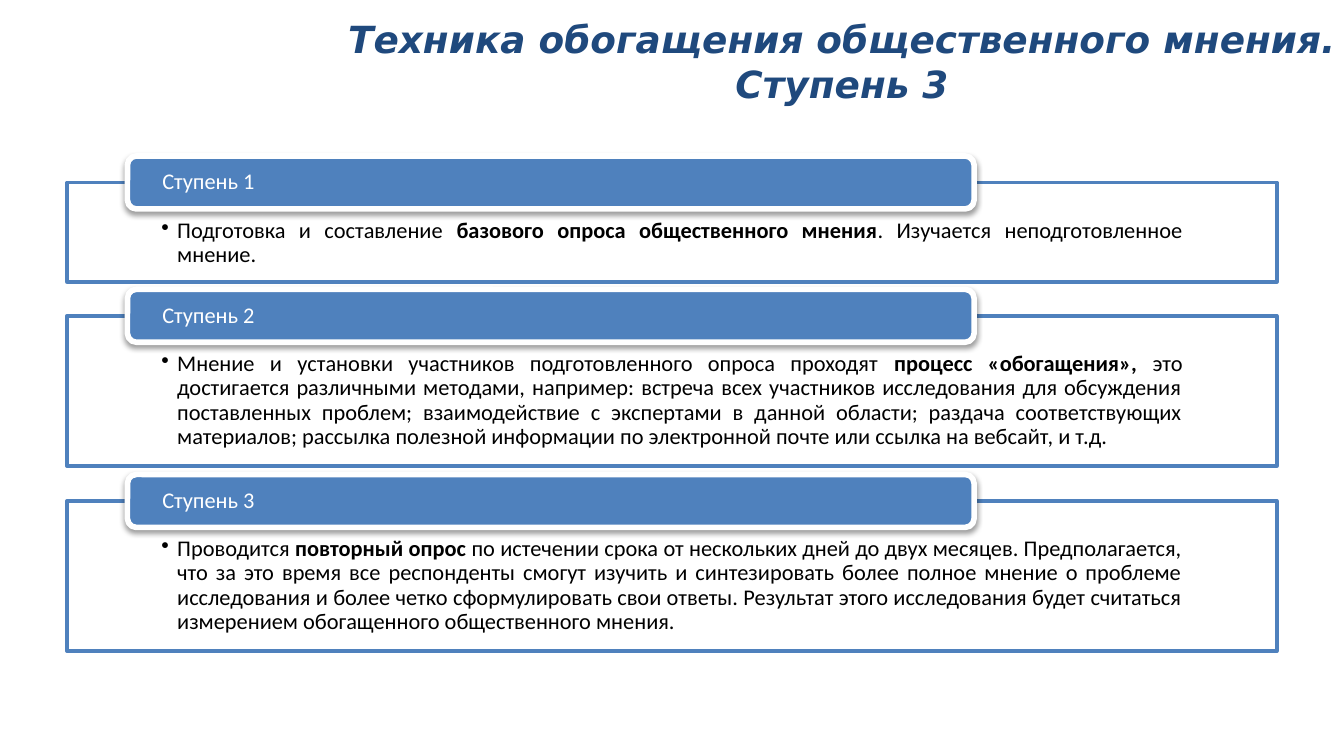
"""Build a slide that shows three steps of enriching public opinion."""
from dataclasses import dataclass

import lxml.etree
import pptx
import pptx.dml.color
import pptx.enum.shapes
import pptx.enum.text
import pptx.oxml.ns
import pptx.util

Cm = pptx.util.Cm
Pt = pptx.util.Pt
SHAPE = pptx.enum.shapes.MSO_SHAPE
ALIGN = pptx.enum.text.PP_ALIGN
ANCHOR = pptx.enum.text.MSO_ANCHOR
qn = pptx.oxml.ns.qn


@dataclass(frozen=True)
class Theme:
    title_color: str = "1F497D"
    accent: str = "4F81BD"
    light: str = "FFFFFF"
    dark: str = "000000"
    title_font: str = "DejaVu Sans"
    body_font: str = "Calibri"
    title_size: int = 20
    body_size: int = 12


TITLE = "Техника обогащения общественного мнения. Ступень 3"
STEPS = [
    ("Ступень 1", 3.45, 1.88, [
        ("Подготовка и составление ", False),
        ("базового опроса общественного мнения", True),
        (". Изучается неподготовленное мнение.", False),
    ]),
    ("Ступень 2", 5.97, 2.84, [
        ("Мнение и установки участников подготовленного опроса проходят ", False),
        ("процесс «обогащения», ", True),
        ("это достигается различными методами, например: встреча всех участников "
         "исследования для обсуждения поставленных проблем; взаимодействие с экспертами "
         "в данной области; раздача соответствующих материалов; рассылка полезной "
         "информации по электронной почте или ссылка на вебсайт, и т.д.", False),
    ]),
    ("Ступень 3", 9.47, 2.84, [
        ("Проводится ", False),
        ("повторный опрос ", True),
        ("по истечении срока от нескольких дней до двух месяцев. Предполагается, что за "
         "это время все респонденты смогут изучить и синтезировать более полное мнение о "
         "проблеме исследования и более четко сформулировать свои ответы. Результат этого "
         "исследования будет считаться измерением обогащенного общественного мнения.", False),
    ]),
]


class SlideBuilder:
    def __init__(self, slide, theme):
        self.slide = slide
        self.theme = theme

    def rgb(self, color):
        return pptx.dml.color.RGBColor.from_string(color)

    def style_run(self, r, color, size, font, bold=False, italic=False):
        r.font.name = font
        r.font.size = Pt(size)
        r.font.bold = bold
        r.font.italic = italic
        r.font.color.rgb = self.rgb(color)

    def set_frame(self, tf, anchor, left, top, right, bottom):
        tf.word_wrap = True
        tf.vertical_anchor = anchor
        tf.margin_left, tf.margin_top = Cm(left), Cm(top)
        tf.margin_right, tf.margin_bottom = Cm(right), Cm(bottom)

    def box(self, kind, left, top, width, height, fill, line, line_width):
        sp = self.slide.shapes.add_shape(kind, Cm(left), Cm(top), Cm(width), Cm(height))
        sp.shadow.inherit = False
        sp.fill.solid()
        sp.fill.fore_color.rgb = self.rgb(fill)
        sp.line.color.rgb = self.rgb(line)
        sp.line.width = Pt(line_width)
        return sp

    def set_alpha(self, color_element, percent):
        lxml.etree.SubElement(color_element, qn("a:alpha"), val=str(percent * 1000))

    def add_shadow(self, sp):
        effects = sp._element.spPr.find(qn("a:effectLst"))
        shadow = lxml.etree.SubElement(
            effects, qn("a:outerShdw"), blurRad=str(Pt(3.1)), dist=str(Pt(1.6)),
            dir="5400000", rotWithShape="0")
        color = lxml.etree.SubElement(shadow, qn("a:srgbClr"), val=self.theme.dark)
        self.set_alpha(color, 38)

    def title(self, text, left, top, width, height):
        t = self.theme
        sp = self.slide.shapes.add_textbox(Cm(left), Cm(top), Cm(width), Cm(height))
        tf = sp.text_frame
        self.set_frame(tf, ANCHOR.MIDDLE, 0.25, 0.13, 0.25, 0.13)
        tf.text = text
        p = tf.paragraphs[0]
        p.alignment = ALIGN.CENTER
        self.style_run(p.runs[0], t.title_color, t.title_size, t.title_font, True, True)

    def panel(self, parts, left, top, width, height):
        t = self.theme
        sp = self.box(SHAPE.RECTANGLE, left, top, width, height, t.light, t.accent, 2)
        self.set_alpha(sp._element.spPr.find(qn("a:solidFill"))[0], 90)
        tf = sp.text_frame
        self.set_frame(tf, ANCHOR.TOP, 1.78, 0.69, 1.78, 0.23)
        p = tf.paragraphs[0]
        p.level = 1
        p.alignment = ALIGN.JUSTIFY
        p.line_spacing = 0.9
        pPr = p._p.get_or_add_pPr()
        pPr.set("marL", str(Cm(0.3)))
        pPr.set("indent", str(Cm(-0.3)))
        lxml.etree.SubElement(pPr, qn("a:buChar"), char="•")
        for text, bold in parts:
            r = p.add_run()
            r.text = text
            self.style_run(r, t.dark, t.body_size, t.body_font, bold)

    def tab(self, text, left, top, width, height):
        t = self.theme
        sp = self.box(SHAPE.ROUNDED_RECTANGLE, left, top, width, height,
                      t.accent, t.light, 3)
        self.add_shadow(sp)
        tf = sp.text_frame
        self.set_frame(tf, ANCHOR.MIDDLE, 0.61, 0, 0.61, 0)
        tf.text = text
        p = tf.paragraphs[0]
        p.alignment = ALIGN.LEFT
        p.line_spacing = 0.9
        self.style_run(p.runs[0], t.light, t.body_size, t.body_font)


def main():
    prs = pptx.Presentation()
    prs.slide_width, prs.slide_height = Cm(25.4), Cm(14.29)
    s = prs.slides.add_slide(prs.slide_layouts[6])
    builder = SlideBuilder(s, Theme())
    builder.title(TITLE, 5.64, 0, 20.55, 2.31)
    tab_height = 1
    for name, top, height, parts in STEPS:
        builder.panel(parts, 1.27, top, 22.86, height)
        builder.tab(name, 2.41, top - tab_height / 2, 16, tab_height)
    prs.save("out.pptx")


if __name__ == "__main__":
    main()
